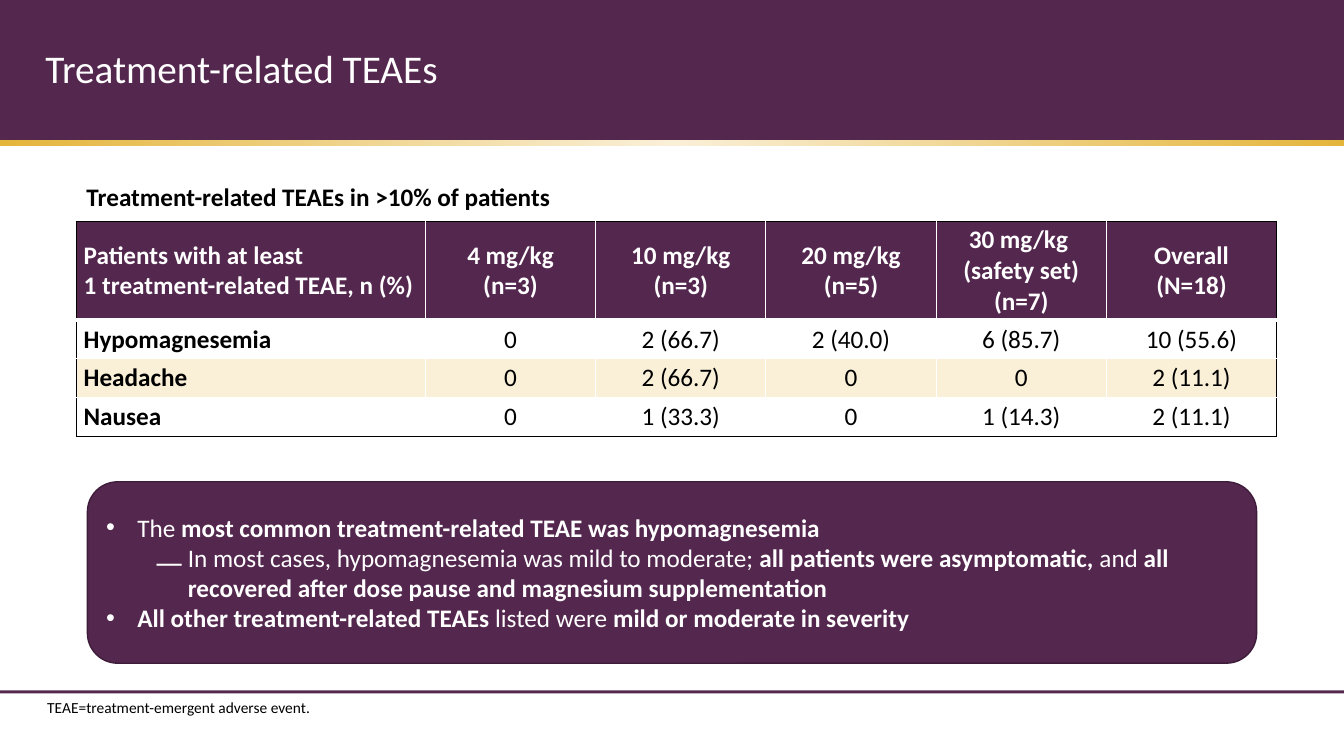
from copy import deepcopy

from lxml import etree
from pptx import Presentation
from pptx.dml.color import RGBColor
from pptx.enum.shapes import MSO_SHAPE
from pptx.enum.text import MSO_ANCHOR, PP_ALIGN
from pptx.oxml.ns import qn
from pptx.util import Inches, Pt

RECTANGLE = MSO_SHAPE.RECTANGLE
ROUNDED = MSO_SHAPE.ROUNDED_RECTANGLE
MIDDLE = MSO_ANCHOR.MIDDLE
LEFT, CENTER = PP_ALIGN.LEFT, PP_ALIGN.CENTER
PLUM, DARK_PLUM, GOLD, CREAM = "54274E", "3E1D3A", "E4B53B", "FAF0D8"
WHITE, BLACK = "FFFFFF", "000000"

HEADERS = [
    "*Patients with at least \v1 treatment-related TEAE, n (%)*",
    "*4 mg/kg*\n*(n=3)*",
    "*10 mg/kg*\n*(n=3)*",
    "*20 mg/kg*\n*(n=5)*",
    "*30 mg/kg \v(safety set)*\n*(n=7)*",
    "*Overall*\n*(N=18)*",
]
EVENTS = [
    ["*Hypomagnesemia*", "0", "2 (66.7)", "2 (40.0)", "6 (85.7)", "10 (55.6)"],
    ["*Headache*", "0", "2 (66.7)", "0", "0", "2 (11.1)"],
    ["*Nausea*", "0", "1 (33.3)", "0", "1 (14.3)", "2 (11.1)"],
]
FINDINGS = [
    ("•", 0, "The *most common treatment-related TEAE was hypomagnesemia*"),
    ("⎼", 1, "In most cases, hypomagnesemia was mild to moderate; *all patients were "
             "asymptomatic, *and *all recovered after dose pause and magnesium supplementation*"),
    ("•", 0, "*All other treatment-related TEAEs *listed were *mild or moderate in severity*"),
]


def color(value):
    return RGBColor.from_string(value)


def apply(target, values):
    for name, value in values.items():
        setattr(target, name, value)


class SlideBuilder:
    font_name = "Calibri"

    def __init__(self, deck):
        self.width, self.height = deck.slide_width, deck.slide_height
        self.page = deck.slides.add_slide(deck.slide_layouts[5])

    def across(self, percent):
        return round(self.width * percent / 100)

    def down(self, percent):
        return round(self.height * percent / 100)

    def frame(self, left, top, width, height):
        return self.across(left), self.down(top), self.across(width), self.down(height)

    def add_spans(self, para, text, size, ink, **format_values):
        apply(para, format_values)
        for index, part in enumerate(text.split("*")):
            for line_index, line in enumerate(part.split("\v")):
                if line_index:
                    para.add_line_break()
                if line:
                    span = para.add_run()
                    span.text = line
                    apply(span.font, {"name": self.font_name, "size": Pt(size), "bold": index % 2 == 1})
                    span.font.color.rgb = color(ink)

    def title(self, text, area):
        box = self.page.shapes.title
        box.element.getparent().append(box.element)
        apply(box, dict(zip(("left", "top", "width", "height"), self.frame(*area))))
        inset = Inches(0.08)
        apply(box.text_frame, {"vertical_anchor": MIDDLE, "word_wrap": True,
                               "margin_left": inset, "margin_right": inset,
                               "margin_top": inset, "margin_bottom": inset})
        self.add_spans(box.text_frame.paragraphs[0], text, 28, WHITE, alignment=LEFT, line_spacing=0.9)

    def text(self, text, area, size):
        box = self.page.shapes.add_textbox(*self.frame(*area))
        box.text_frame.word_wrap = True
        self.add_spans(box.text_frame.paragraphs[0], text, size, BLACK)

    def shape(self, kind, area, fill, line=None):
        box = self.page.shapes.add_shape(kind, *self.frame(*area))
        box.shadow.inherit = False
        box.fill.solid()
        box.fill.fore_color.rgb = color(fill)
        if line:
            box.line.color.rgb = color(line)
            box.line.width = Pt(1)
        else:
            box.line.fill.background()
        return box

    def gradient_band(self, area, stops):
        band = self.shape(RECTANGLE, area, GOLD)
        band.fill.gradient()
        band.fill.gradient_angle = 0
        stop_list = next(band.element.iter(qn("a:gsLst")))
        stop_list.append(deepcopy(stop_list[0]))
        for stop, (position, value) in zip(band.fill.gradient_stops, stops):
            stop.position = position
            stop.color.rgb = color(value)

    def bullet_panel(self, area, items):
        panel = self.shape(ROUNDED, area, PLUM, DARK_PLUM)
        apply(panel.text_frame, {"word_wrap": True, "vertical_anchor": MIDDLE})
        for index, (mark, level, text) in enumerate(items):
            para = panel.text_frame.add_paragraph() if index else panel.text_frame.paragraphs[0]
            properties = para._p.get_or_add_pPr()
            properties.set("marL", str(Inches(0.31 + 0.5 * level)))
            properties.set("indent", str(Inches(-0.31)))
            etree.SubElement(properties, qn("a:buFont"), typeface="Arial")
            etree.SubElement(properties, qn("a:buChar"), char=mark)
            self.add_spans(para, text, 18, WHITE, alignment=LEFT, level=level)

    def borders(self, cell, edges):
        properties = cell._tc.get_or_add_tcPr()
        for index, (side, (value, points)) in enumerate(edges.items()):
            edge = etree.Element(qn("a:ln" + side), w=str(Pt(points)))
            fill = etree.SubElement(edge, qn("a:solidFill"))
            etree.SubElement(fill, qn("a:srgbClr"), val=value)
            properties.insert(index, edge)

    def table(self, rows, area, column_widths, row_heights):
        grid = self.page.shapes.add_table(len(rows), len(rows[0]), *self.frame(*area)).table
        grid.horz_banding = False
        for column, width in zip(grid.columns, column_widths):
            column.width = self.across(width)
        for row, height in zip(grid.rows, row_heights):
            row.height = self.down(height)
        last_row, last_column = len(rows) - 1, len(rows[0]) - 1
        thin_white, thin_black = (WHITE, 1), (BLACK, 1)
        for r, row in enumerate(rows):
            header = r == 0
            fill = PLUM if header else (WHITE, CREAM)[(r - 1) % 2]
            divider = (WHITE, 3) if header else thin_white
            above = (WHITE, 3) if r == 1 else thin_white
            for c, text in enumerate(row):
                cell = grid.cell(r, c)
                cell.fill.solid()
                cell.fill.fore_color.rgb = color(fill)
                inset = Inches(0.03 if header else 0.04)
                apply(cell, {"vertical_anchor": MIDDLE, "margin_top": inset, "margin_bottom": inset,
                             "margin_left": Inches(0.07), "margin_right": Inches(0.07)})
                self.borders(cell, {
                    "L": thin_black if c == 0 else thin_white,
                    "R": thin_black if c == last_column else thin_white,
                    "T": thin_black if header else above,
                    "B": thin_black if r == last_row else divider,
                })
                for index, line in enumerate(text.split("\n")):
                    para = cell.text_frame.add_paragraph() if index else cell.text_frame.paragraphs[0]
                    self.add_spans(para, line, 18, WHITE if header else BLACK, alignment=CENTER if c else LEFT)


def main():
    deck = Presentation()
    deck.slide_width, deck.slide_height = Inches(13.33), Inches(7.5)
    slide = SlideBuilder(deck)
    slide.shape(RECTANGLE, (0, 0, 100, 18.67), PLUM)
    slide.gradient_band((0, 18.53, 100, 0.8), [(0, GOLD), (0.5, CREAM), (1, GOLD)])
    slide.shape(RECTANGLE, (0, 91.33, 100, 0.4), PLUM)
    slide.title("Treatment-related TEAEs", (2.78, 5.47, 94.5, 7.73))
    slide.bullet_panel((6.5, 63.73, 87, 24), FINDINGS)
    slide.table([HEADERS] + EVENTS, (5.7, 29.33, 89.3, 28.3),
                [25.95] + [12.67] * 5, [12.93] + [5.1] * 3)
    slide.text("TEAE=treatment-emergent adverse event.", (2.78, 91.73, 94.5, 3.87), 11)
    slide.text("*Treatment-related TEAEs in >10% of patients*", (5.7, 23.33, 60.8, 5.33), 18)
    deck.save("out.pptx")


if __name__ == "__main__":
    main()
